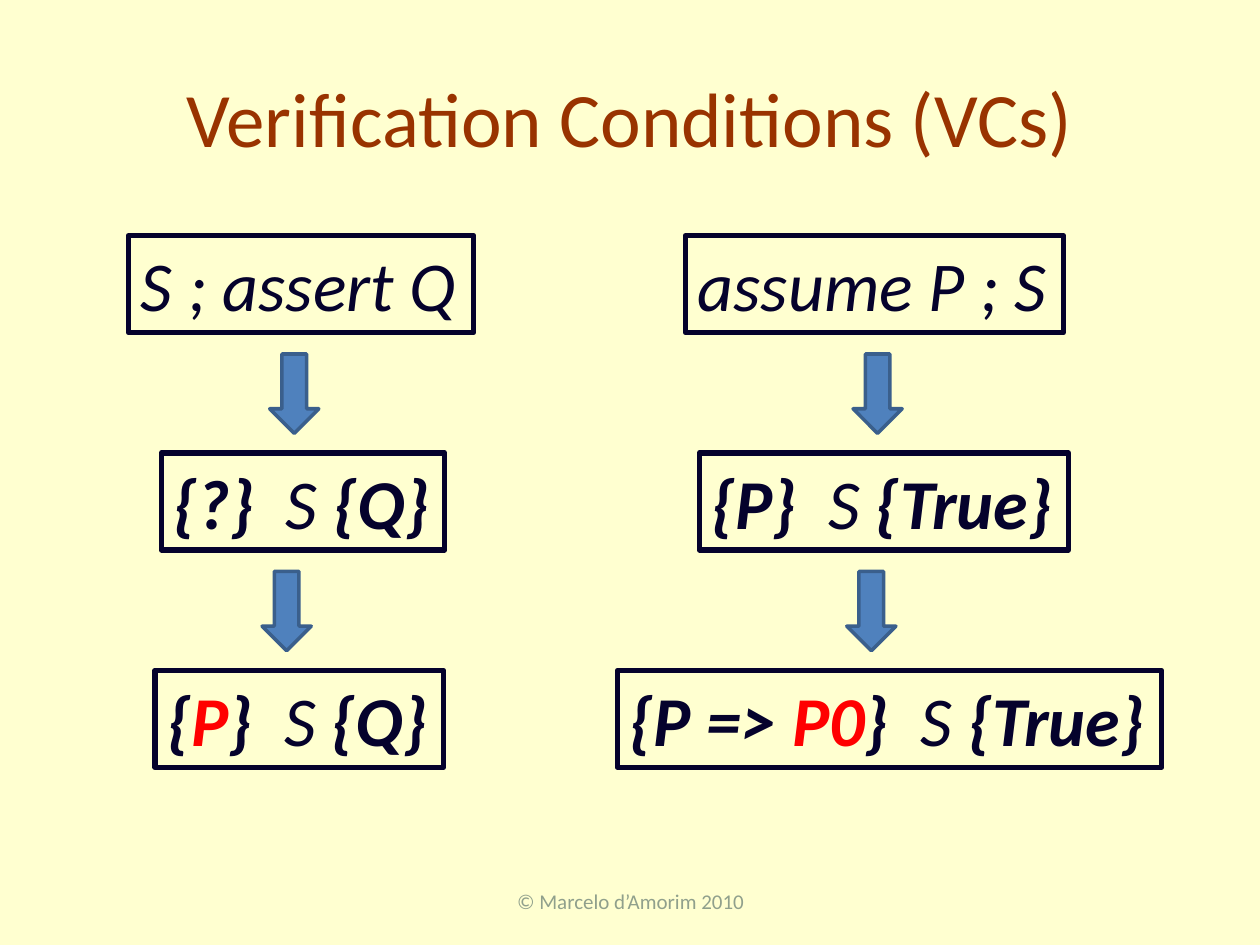
"""Build the slide on verification conditions for assert and assume."""
import pptx
import pptx.util
import pptx.dml.color
import pptx.enum.shapes
import pptx.enum.text

Inches = pptx.util.Inches
Pt = pptx.util.Pt
INK = "05022C"
RED = "FF0000"


def paint(color_format, value):
    color_format.rgb = pptx.dml.color.RGBColor.from_string(value)


def add_run(paragraph, text, size=40, color=INK, bold=False, italic=False):
    run = paragraph.add_run()
    run.text = text
    run.font.name = "Calibri"
    run.font.size = Pt(size)
    run.font.bold = bold
    run.font.italic = italic
    paint(run.font.color, color)


deck = pptx.Presentation()
deck.slide_width = Inches(10)
deck.slide_height = Inches(7.5)
slide = deck.slides.add_slide(deck.slide_layouts[5])
slide.background.fill.solid()
paint(slide.background.fill.fore_color, "FFFFD0")

title = slide.shapes.title
title.left, title.top = Inches(0.5), Inches(0.3)
title.width, title.height = Inches(9), Inches(1.25)
title.text_frame.vertical_anchor = pptx.enum.text.MSO_ANCHOR.MIDDLE
heading = title.text_frame.paragraphs[0]
heading.alignment = pptx.enum.text.PP_ALIGN.CENTER
add_run(heading, "Verification Conditions (VCs)", size=44, color="993300")

footer = slide.shapes.add_textbox(Inches(3.42), Inches(6.95), Inches(3.17), Inches(0.4))
footer.text_frame.word_wrap = True
footer.text_frame.vertical_anchor = pptx.enum.text.MSO_ANCHOR.MIDDLE
copyright_line = footer.text_frame.paragraphs[0]
copyright_line.alignment = pptx.enum.text.PP_ALIGN.CENTER
add_run(copyright_line, "© Marcelo d’Amorim 2010", size=12, color="90A08C")

plain = {}
strong = {"bold": True}
solved = {"bold": True, "color": RED}
derivations = [
    [
        (1.02, 2.74, [("S ; assert Q", plain)]),
        (1.28, 2.25, [("{?}  ", strong), ("S ", plain), ("{Q}", strong)]),
        (1.23, 2.29, [("{", strong), ("P", solved), ("}  ", strong),
                      ("S ", plain), ("{Q}", strong)]),
    ],
    [
        (5.44, 3, [("assume P ; S", plain)]),
        (5.55, 2.93, [("{P}  ", strong), ("S ", plain), ("{True}", strong)]),
        (4.9, 4.32, [("{P => ", strong), ("P0", solved), ("}  ", strong),
                     ("S ", plain), ("{True}", strong)]),
    ],
]
first_top, step_pitch = 1.87, 1.725
for steps in derivations:
    for row, (left, width, runs) in enumerate(steps):
        step = slide.shapes.add_shape(
            pptx.enum.shapes.MSO_SHAPE.RECTANGLE,
            Inches(left), Inches(first_top + row * step_pitch), Inches(width), Inches(0.77))
        step.shadow.inherit = False
        step.fill.background()
        paint(step.line.color, INK)
        step.line.width = Pt(3)
        step.text_frame.word_wrap = False
        step.text_frame.auto_size = pptx.enum.text.MSO_AUTO_SIZE.SHAPE_TO_FIT_TEXT
        step.text_frame.vertical_anchor = pptx.enum.text.MSO_ANCHOR.TOP
        formula = step.text_frame.paragraphs[0]
        formula.alignment = pptx.enum.text.PP_ALIGN.LEFT
        for text, style in runs:
            add_run(formula, text, italic=True, **style)

for arrow_lefts in [(2.14, 2.08), (6.77, 6.72)]:
    for row, left in enumerate(arrow_lefts):
        arrow = slide.shapes.add_shape(
            pptx.enum.shapes.MSO_SHAPE.DOWN_ARROW,
            Inches(left), Inches(2.81 + row * step_pitch), Inches(0.39), Inches(0.63))
        arrow.shadow.inherit = False
        arrow.fill.solid()
        paint(arrow.fill.fore_color, "4F81BD")
        paint(arrow.line.color, "3A5F8C")
        arrow.line.width = Pt(2)

deck.save("out.pptx")
